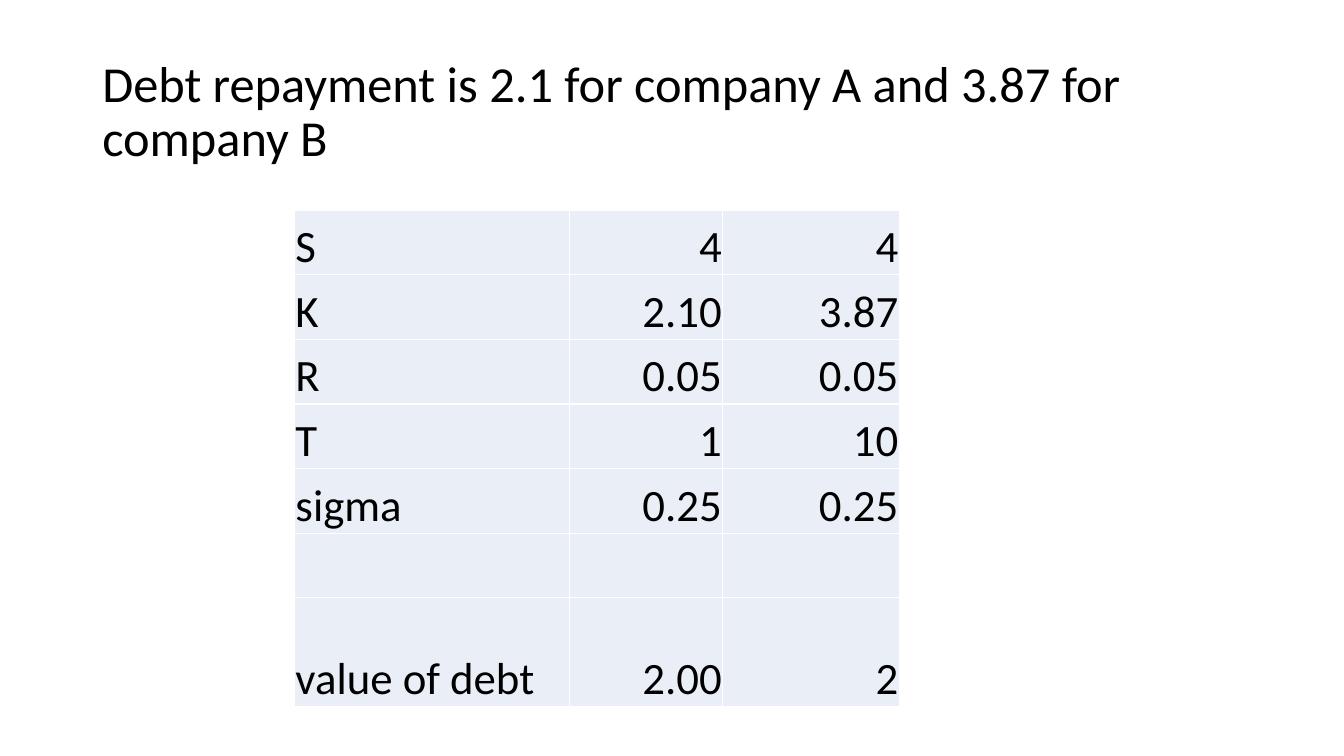
from dataclasses import dataclass

from lxml import etree
from pptx import Presentation
from pptx.dml.color import RGBColor
from pptx.enum.text import MSO_ANCHOR, PP_ALIGN
from pptx.oxml.ns import qn
from pptx.slide import Slide
from pptx.table import _Cell
from pptx.text.text import TextFrame
from pptx.util import Pt

LEFT, RIGHT = PP_ALIGN.LEFT, PP_ALIGN.RIGHT
MIDDLE, BOTTOM = MSO_ANCHOR.MIDDLE, MSO_ANCHOR.BOTTOM

COLORS = {"text": "000000", "cell": "EAEFF7", "border": "FFFFFF"}
FONT = "Calibri"
COLUMN_WIDTHS = (196.6, 109.4, 126)
ROW_HEIGHT, DEBT_ROW_HEIGHT = 46.2, 77.8


@dataclass
class Parameter:
    label: str
    company_a: str
    company_b: str
    height: float = ROW_HEIGHT


PARAMETERS = [
    Parameter("S", "4", "4"),
    Parameter("K", "2.10", "3.87"),
    Parameter("R", "0.05", "0.05"),
    Parameter("T", "1", "10"),
    Parameter("sigma", "0.25", "0.25"),
    Parameter("", "", ""),
    Parameter("value of debt", "2.00", "2", DEBT_ROW_HEIGHT),
]


def write(frame: TextFrame, text: str, *, size: float,
          align: PP_ALIGN = LEFT, line_spacing: float = 1.0) -> None:
    paragraph = frame.paragraphs[0]
    paragraph.alignment = align
    paragraph.line_spacing = line_spacing
    paragraph.font.size = Pt(size)
    if text:
        run = paragraph.add_run()
        run.text = text
        run.font.size = Pt(size)
        run.font.name = FONT
        run.font.color.rgb = RGBColor.from_string(COLORS["text"])


def set_borders(cell: _Cell, color: str, width: float) -> None:
    properties = cell._tc.get_or_add_tcPr()
    for side in ("a:lnL", "a:lnR", "a:lnT", "a:lnB"):
        line = etree.SubElement(properties, qn(side), w=str(Pt(width)))
        fill = etree.SubElement(line, qn("a:solidFill"))
        etree.SubElement(fill, qn("a:srgbClr"), val=color)


def style_cell(cell: _Cell) -> None:
    set_borders(cell, COLORS["border"], 1)
    cell.fill.solid()
    cell.fill.fore_color.rgb = RGBColor.from_string(COLORS["cell"])
    cell.vertical_anchor = BOTTOM
    cell.margin_left = cell.margin_right = cell.margin_top = Pt(0.7)
    cell.margin_bottom = Pt(0)


def add_heading(slide: Slide, text: str) -> None:
    heading = slide.shapes.add_textbox(Pt(66), Pt(28.8), Pt(828), Pt(104.4)).text_frame
    heading.word_wrap = True
    heading.vertical_anchor = MIDDLE
    write(heading, text, size=36, line_spacing=0.9)


def add_debt_table(slide: Slide, parameters: list[Parameter]) -> None:
    debt = slide.shapes.add_table(
        len(parameters), len(COLUMN_WIDTHS), Pt(210.4), Pt(150),
        Pt(sum(COLUMN_WIDTHS)), Pt(sum(p.height for p in parameters))).table
    debt.first_row = debt.horz_banding = False
    for column, width in zip(debt.columns, COLUMN_WIDTHS):
        column.width = Pt(width)
    for row, parameter in zip(debt.rows, parameters):
        row.height = Pt(parameter.height)
        values = (parameter.label, parameter.company_a, parameter.company_b)
        for cell, value, align in zip(row.cells, values, (LEFT, RIGHT, RIGHT)):
            style_cell(cell)
            write(cell.text_frame, value, size=32, align=align)


def main() -> None:
    deck = Presentation()
    deck.slide_width, deck.slide_height = Pt(960), Pt(540)
    slide = deck.slides.add_slide(deck.slide_layouts[6])

    # Heading
    add_heading(slide, "Debt repayment is 2.1 for company A and 3.87 for company B")

    # Inputs and debt value of both companies
    add_debt_table(slide, PARAMETERS)

    deck.save("out.pptx")


if __name__ == "__main__":
    main()
